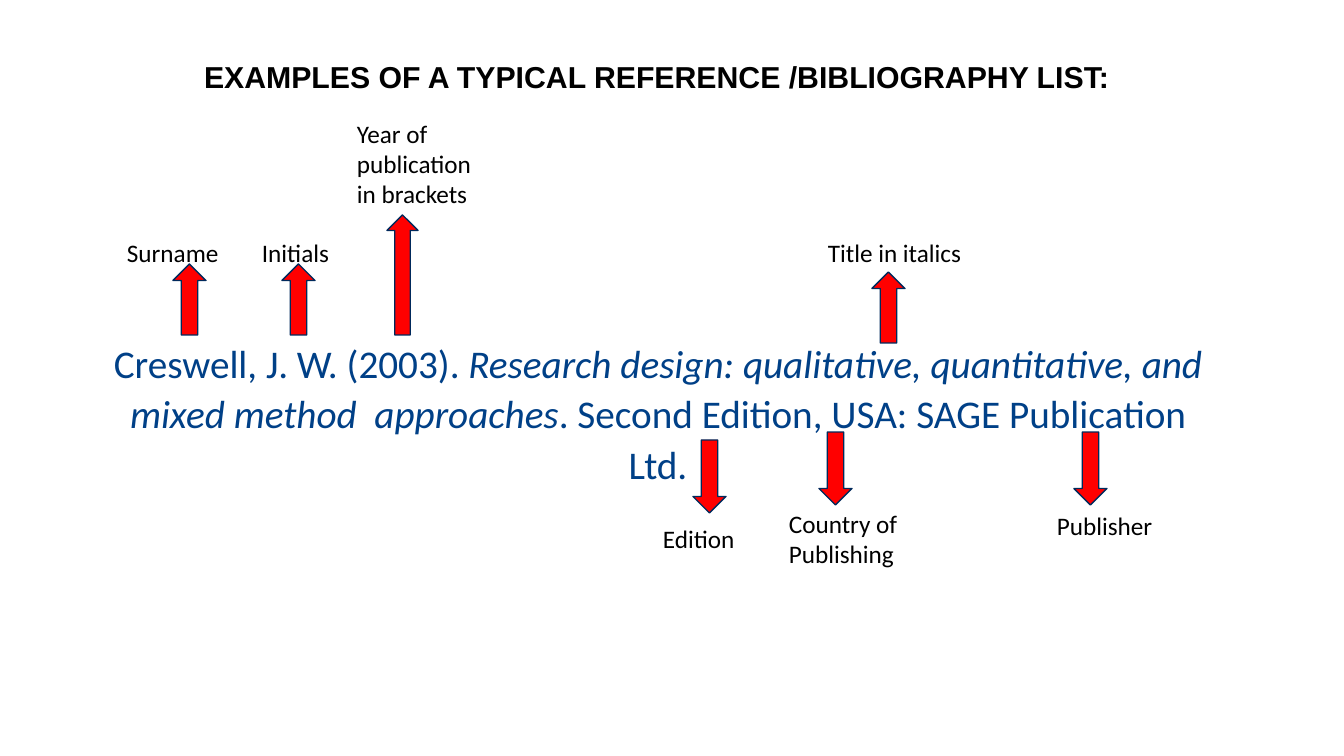
from dataclasses import dataclass

from pptx import Presentation
from pptx.dml.color import RGBColor
from pptx.enum.shapes import MSO_SHAPE
from pptx.enum.text import MSO_ANCHOR, MSO_AUTO_SIZE, PP_ALIGN
from pptx.slide import Slide
from pptx.text.text import TextFrame, _Paragraph
from pptx.util import Emu, Pt

EMU_PER_PX = 914400 / 100.8


@dataclass(frozen=True)
class Theme:
    black: RGBColor = RGBColor(0x00, 0x00, 0x00)
    citation: RGBColor = RGBColor(0x00, 0x40, 0x87)
    arrow_fill: RGBColor = RGBColor(0xFF, 0x00, 0x00)
    arrow_line: RGBColor = RGBColor(0x00, 0x29, 0x5B)
    title_font: str = "Arial"
    body_font: str = "Calibri"
    title_size: float = 21.6
    citation_size: float = 28
    label_size: float = 18


@dataclass(frozen=True)
class Box:
    left: int
    top: int
    width: int
    height: int


@dataclass(frozen=True)
class Callout:
    text: str
    label: Box
    arrow: Box
    points_up: bool = True


THEME = Theme()

CALLOUTS = [
    Callout("Surname", Box(117, 232, 146, 40), Box(173, 264, 33, 71)),
    Callout("Initials", Box(252, 232, 146, 40), Box(282, 264, 33, 71)),
    Callout("Year of publication in brackets", Box(347, 113, 146, 102),
            Box(387, 215, 31, 120)),
    Callout("Title in italics", Box(818, 232, 195, 40), Box(872, 272, 33, 71)),
    Callout("Edition", Box(653, 518, 146, 40), Box(693, 440, 33, 73), False),
    Callout("Country of Publishing", Box(779, 503, 174, 72),
            Box(819, 432, 33, 73), False),
    Callout("Publisher", Box(1047, 505, 146, 40), Box(1074, 432, 33, 73), False),
]

CITATION = [
    ("Creswell, J. W. (2003). ", False),
    ("Research design: qualitative, quantitative, and mixed method  approaches", True),
    (". Second Edition, USA: SAGE Publication Ltd.", False),
]


def px(n: int) -> Emu:
    return Emu(round(n * EMU_PER_PX))


def place(box: Box) -> tuple[Emu, Emu, Emu, Emu]:
    return px(box.left), px(box.top), px(box.width), px(box.height)


def add_text(p: _Paragraph, text: str, *, size: float, color: RGBColor = THEME.black,
             font: str = THEME.body_font, bold: bool = False, italic: bool = False) -> None:
    r = p.add_run()
    r.text = text
    r.font.name = font
    r.font.size = Pt(size)
    r.font.bold = bold
    r.font.italic = italic
    r.font.color.rgb = color


def add_box(s: Slide, box: Box) -> TextFrame:
    tf = s.shapes.add_textbox(*place(box)).text_frame
    tf.word_wrap = True
    return tf


def add_title(s: Slide) -> None:
    title = s.shapes.title
    title.left, title.top, title.width, title.height = place(Box(194, 43, 1159, 71))
    tf = title.text_frame
    tf.auto_size = MSO_AUTO_SIZE.NONE
    tf.vertical_anchor = MSO_ANCHOR.MIDDLE
    p = tf.paragraphs[0]
    p.alignment = PP_ALIGN.LEFT
    p.line_spacing = 0.9
    add_text(p, "EXAMPLES OF A TYPICAL REFERENCE /BIBLIOGRAPHY LIST:",
             size=THEME.title_size, font=THEME.title_font, bold=True)


def add_citation(s: Slide) -> None:
    tf = add_box(s, Box(106, 336, 1104, 156))
    tf.margin_left = tf.margin_right = tf.margin_top = tf.margin_bottom = 0
    p = tf.paragraphs[0]
    p.alignment = PP_ALIGN.CENTER
    p.line_spacing = 1.07
    for text, italic in CITATION:
        add_text(p, text, size=THEME.citation_size, color=THEME.citation, italic=italic)


def add_callout(s: Slide, callout: Callout) -> None:
    kind = MSO_SHAPE.UP_ARROW if callout.points_up else MSO_SHAPE.DOWN_ARROW
    sp = s.shapes.add_shape(kind, *place(callout.arrow))
    sp.shadow.inherit = False
    sp.fill.solid()
    sp.fill.fore_color.rgb = THEME.arrow_fill
    sp.line.color.rgb = THEME.arrow_line
    sp.line.width = Pt(1)
    tf = add_box(s, callout.label)
    add_text(tf.paragraphs[0], callout.text, size=THEME.label_size)


def main() -> None:
    prs = Presentation()
    prs.slide_width, prs.slide_height = px(1344), px(756)
    s = prs.slides.add_slide(prs.slide_layouts.get_by_name("Title Only"))
    add_title(s)
    add_citation(s)
    for callout in CALLOUTS:
        add_callout(s, callout)
    prs.save("out.pptx")


if __name__ == "__main__":
    main()
